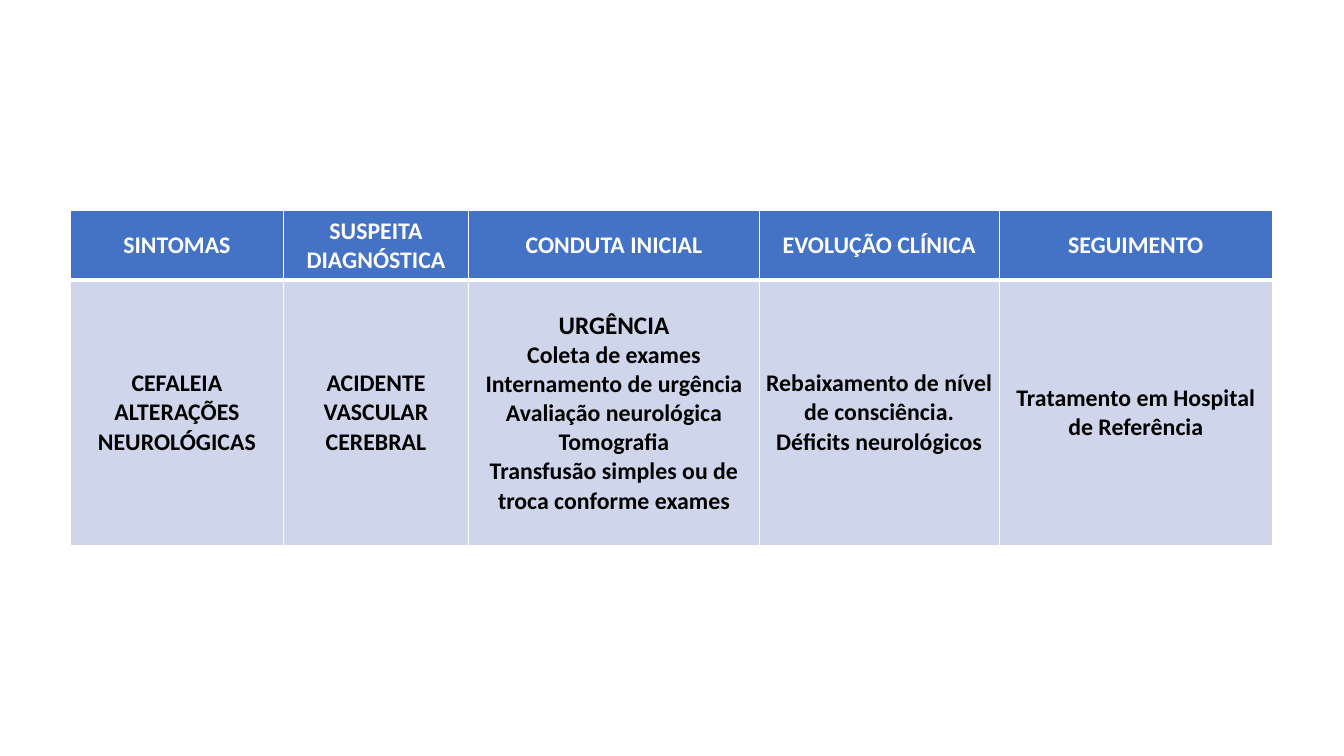
from lxml.etree import SubElement
from pptx import Presentation
from pptx.dml.color import RGBColor
from pptx.enum.text import MSO_ANCHOR, PP_ALIGN
from pptx.oxml.ns import qn
from pptx.util import Inches, Pt

COLOURS = {"header": "4472C4", "body": "CFD5EA", "line": "FFFFFF",
           "header_text": "FFFFFF", "body_text": "000000"}
FONT = "Calibri"
TEXT_SIZE, URGENT_SIZE = 17, 18
LEFT, TOP = 0.7, 2.09
COLUMN_WIDTHS = [2.11, 1.84, 2.88, 2.38, 2.71]
ROW_HEIGHTS = [0.69, 2.63]
CELL_MARGIN = 0.03

# Each column: heading, then the paragraphs below it
CARE_PATHWAY = [
    ("SINTOMAS", ["CEFALEIA", "ALTERAÇÕES NEUROLÓGICAS"]),
    ("SUSPEITA DIAGNÓSTICA", ["ACIDENTE VASCULAR CEREBRAL"]),
    ("CONDUTA INICIAL", ["URGÊNCIA", "Coleta de exames", "Internamento de urgência",
                         "Avaliação neurológica", "Tomografia",
                         "Transfusão simples ou de troca conforme exames"]),
    ("EVOLUÇÃO CLÍNICA", ["Rebaixamento de nível de consciência.",
                          "Déficits neurológicos"]),
    ("SEGUIMENTO", ["Tratamento em Hospital de Referência"]),
]


def add_borders(cell, top, bottom):
    """Draw the four cell borders, with widths in points."""
    properties = cell._tc.get_or_add_tcPr()
    for side, width in (("L", 1), ("R", 1), ("T", top), ("B", bottom)):
        line = SubElement(properties, qn(f"a:ln{side}"), w=str(Pt(width)))
        fill = SubElement(line, qn("a:solidFill"))
        SubElement(fill, qn("a:srgbClr"), val=COLOURS["line"])


def write_paragraph(para, text, colour):
    para.alignment = PP_ALIGN.CENTER
    span = para.add_run()
    span.text = text
    span.font.name = FONT
    span.font.size = Pt(URGENT_SIZE if text == "URGÊNCIA" else TEXT_SIZE)
    span.font.bold = True
    span.font.color.rgb = RGBColor.from_string(COLOURS[colour])


def fill_cell(cell, lines, kind):
    """Format a cell of the kind 'header' or 'body' and write its lines."""
    if kind == "header":
        add_borders(cell, top=1, bottom=3)
    else:
        add_borders(cell, top=3, bottom=1)
    cell.fill.solid()
    cell.fill.fore_color.rgb = RGBColor.from_string(COLOURS[kind])
    cell.vertical_anchor = MSO_ANCHOR.MIDDLE
    cell.margin_left = cell.margin_right = Inches(CELL_MARGIN)
    cell.margin_top = cell.margin_bottom = Inches(CELL_MARGIN)
    frame = cell.text_frame
    for index, text in enumerate(lines):
        para = frame.add_paragraph() if index else frame.paragraphs[0]
        write_paragraph(para, text, f"{kind}_text")


def add_pathway_table(page):
    table = page.shapes.add_table(
        len(ROW_HEIGHTS), len(COLUMN_WIDTHS), Inches(LEFT), Inches(TOP),
        Inches(sum(COLUMN_WIDTHS)), Inches(sum(ROW_HEIGHTS))).table
    table.horz_banding = False
    for row, height in zip(table.rows, ROW_HEIGHTS):
        row.height = Inches(height)
    for index, (heading, lines) in enumerate(CARE_PATHWAY):
        table.columns[index].width = Inches(COLUMN_WIDTHS[index])
        fill_cell(table.cell(0, index), [heading], "header")
        fill_cell(table.cell(1, index), lines, "body")


def main():
    deck = Presentation()
    deck.slide_width, deck.slide_height = Inches(13.33), Inches(7.5)
    # Blank layout: the slide holds only the table
    page = deck.slides.add_slide(deck.slide_layouts[6])
    add_pathway_table(page)
    deck.save("out.pptx")


if __name__ == "__main__":
    main()
